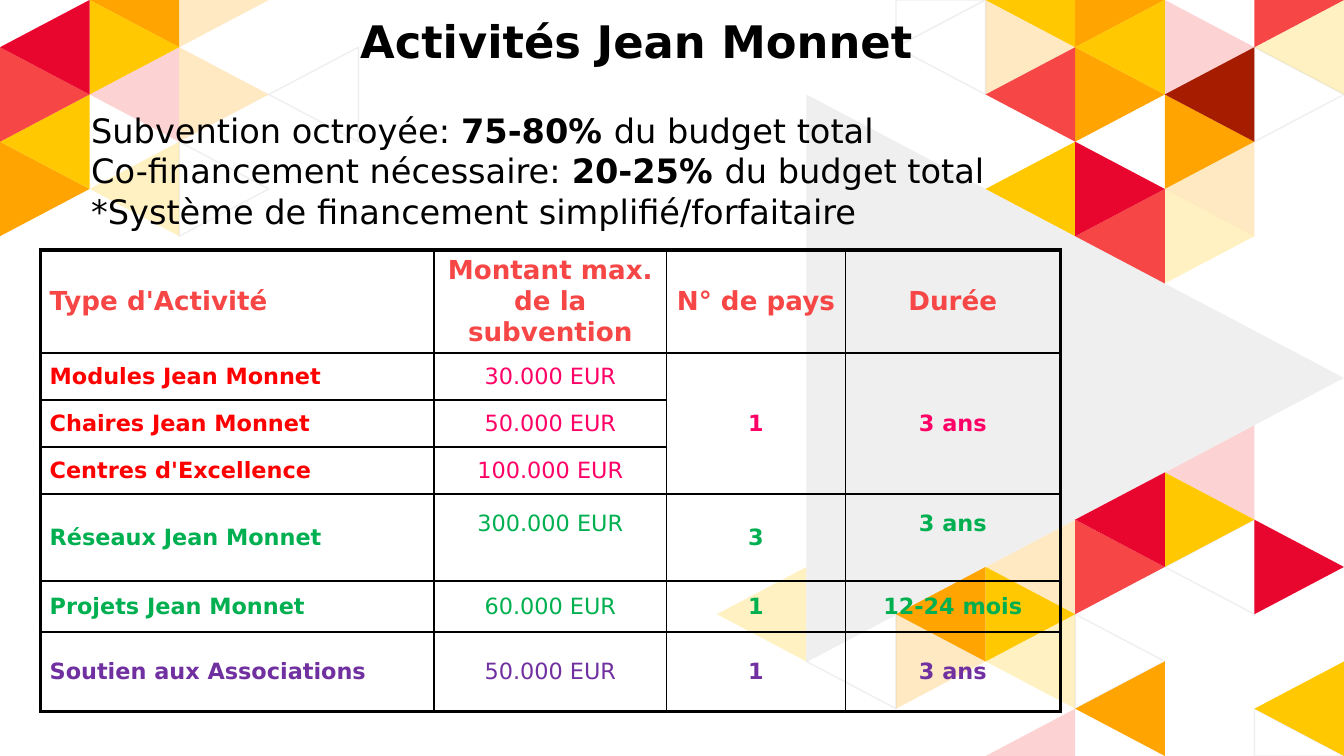
from dataclasses import dataclass
from lxml.etree import SubElement
from pptx import Presentation
from pptx.dml.color import RGBColor
from pptx.enum.text import MSO_ANCHOR, MSO_AUTO_SIZE, PP_ALIGN
from pptx.oxml.ns import qn
from pptx.util import Inches, Pt


@dataclass(frozen=True)
class Theme:
    font: str = "DejaVu Sans"
    black: str = "000000"
    white: str = "FFFFFF"
    grey: str = "EFEFEF"
    orange: str = "FFA400"
    yellow: str = "FFC800"
    coral: str = "F64646"
    crimson: str = "E8062F"
    brown: str = "A61C00"
    red: str = "FF0000"
    pink: str = "FF0066"
    green: str = "00B050"
    purple: str = "7030A0"
    title_size: int = 24
    body_size: int = 18
    header_size: int = 14
    cell_size: int = 12
    thin: float = 1
    thick: float = 2.25


theme = Theme()


def write(para, text, size, color, bold):
    span = para.add_run()
    span.text = text
    span.font.name = theme.font
    span.font.size = Pt(size)
    span.font.bold = bold
    span.font.color.rgb = RGBColor.from_string(color)


def place(box, left, top, width, height, anchor):
    box.left, box.top, box.width, box.height = (Inches(n) for n in (left, top, width, height))
    frame = box.text_frame
    frame.word_wrap = True
    frame.auto_size = MSO_AUTO_SIZE.NONE
    frame.vertical_anchor = anchor
    return frame


deck = Presentation()
deck.slide_width = Inches(10)
deck.slide_height = Inches(10) * 9 // 16
page = deck.slides.add_slide(deck.slide_layouts[5])

GRID_COLUMNS, GRID_ROWS = 15, 16
column = deck.slide_width / GRID_COLUMNS
row = deck.slide_height / GRID_ROWS

# (fill, opacity in percent, cells spanned, right-pointing, left-pointing)
triangles = [
    (theme.white, 100, 1, [(12, 13), (14, 1), (10, -1), (2, 3), (14, 15)],
     [(9, 13), (13, 11), (10, 0), (3, 1)]),
    (theme.orange, 24, 1, [(10, 13), (11, 0), (2, 1), (2, -1)], [(11, 11), (13, 3)]),
    (theme.yellow, 24, 1, [(13, 4)], [(8, 12), (11, 13), (14, 0), (1, 3)]),
    (theme.coral, 24, 1, [(13, 0)], [(13, 9), (11, 15), (1, 1)]),
    (theme.grey, 100, 6, [(9, 2)], []),
    (theme.orange, 100, 1, [(13, 2), (12, -1), (12, 1), (0, 3)], [(10, 12), (12, 14), (1, -1)]),
    (theme.yellow, 100, 1, [(11, 12), (13, 10), (1, 0)],
     [(11, -1), (14, 14), (11, 3), (12, 0), (0, 2)]),
    (theme.coral, 100, 1, [(12, 11), (14, -1), (0, 1)], [(11, 1), (12, 4)]),
    (theme.crimson, 100, 1, [(14, 11), (12, 3)], [(12, 10), (0, 0)]),
    (theme.brown, 100, 1, [], [(13, 1)]),
]
for color, opacity, size, right_pointing, left_pointing in triangles:
    outlines = [(x, x + size, y) for x, y in right_pointing]
    outlines += [(x + size, x, y) for x, y in left_pointing]
    for base, tip, top in outlines:
        corners = [(base, top), (base, top + 2 * size), (tip, top + size)]
        points = [(round(x * column), round(min(max(y, 0), GRID_ROWS) * row)) for x, y in corners]
        builder = page.shapes.build_freeform(*points[0])
        builder.add_line_segments(points[1:], close=True)
        triangle = builder.convert_to_shape()
        triangle.shadow.inherit = False
        triangle.fill.solid()
        triangle.fill.fore_color.rgb = RGBColor.from_string(color)
        if opacity < 100:
            tint = triangle.fill._xPr.find(".//" + qn("a:srgbClr"))
            SubElement(tint, qn("a:alpha"), val=str(opacity * 1000))
        if color == theme.white:
            triangle.line.color.rgb = RGBColor.from_string(theme.grey)
            triangle.line.width = Pt(0.75)
        else:
            triangle.line.fill.background()

title = page.shapes.title
page.shapes._spTree.append(title._element)
para = place(title, 2.58, 0.05, 6, 0.5, MSO_ANCHOR.MIDDLE).paragraphs[0]
para.alignment = PP_ALIGN.LEFT
write(para, "Activités Jean Monnet", theme.title_size, theme.black, True)

funding = [
    [("Subvention octroyée: ", False), ("75-80% ", True), ("du budget total", False)],
    [("Co-financement nécessaire: ", False), ("20-25% ", True), ("du budget total", False)],
    [("*Système de financement simplifié/forfaitaire", False)],
]
box = page.shapes.add_textbox(0, 0, 0, 0)
frame = place(box, 0.58, 0.77, 9.08, 1, MSO_ANCHOR.TOP)
for index, line in enumerate(funding):
    para = frame.add_paragraph() if index else frame.paragraphs[0]
    for text, bold in line:
        write(para, text, theme.body_size, theme.black, bold)

widths = [2.93, 1.73, 1.33, 1.6]
heights = [0.76, 0.35, 0.35, 0.35, 0.65, 0.38, 0.59]
activities = [
    (theme.coral, theme.coral,
     ["Type d'Activité", "Montant max. de la subvention", "N° de pays", "Durée"]),
    (theme.red, theme.pink, ["Modules Jean Monnet", "30.000 EUR", "1", "3 ans"]),
    (theme.red, theme.pink, ["Chaires Jean Monnet", "50.000 EUR", "", ""]),
    (theme.red, theme.pink, ["Centres d'Excellence", "100.000 EUR", "", ""]),
    (theme.green, theme.green, ["Réseaux Jean Monnet", "300.000 EUR", "3", "3 ans"]),
    (theme.green, theme.green, ["Projets Jean Monnet", "60.000 EUR", "1", "12-24 mois"]),
    (theme.purple, theme.purple, ["Soutien aux Associations", "50.000 EUR", "1", "3 ans"]),
]
table = page.shapes.add_table(len(heights), len(widths), Inches(0.3), Inches(1.86),
                              Inches(sum(widths)), Inches(sum(heights))).table
table.first_row = table.horz_banding = False
for table_column, width in zip(table.columns, widths):
    table_column.width = Inches(width)
for table_row, height in zip(table.rows, heights):
    table_row.height = Inches(height)
for x in (2, 3):
    table.cell(1, x).merge(table.cell(3, x))

last_x, last_y = len(widths) - 1, len(heights) - 1
for y, (name_color, value_color, texts) in enumerate(activities):
    for x, text in enumerate(texts):
        cell = table.cell(y, x)
        cell.vertical_anchor = MSO_ANCHOR.MIDDLE
        cell.margin_left = cell.margin_right = Inches(0.07)
        cell.margin_top = cell.margin_bottom = Inches(0.04)
        if text in ("300.000 EUR", "3 ans") and y == 4:
            cell.margin_bottom = Inches(0.24)
        properties = cell._tc.get_or_add_tcPr()
        edges = {"a:lnL": x == 0, "a:lnR": x == last_x, "a:lnT": y == 0, "a:lnB": y == last_y}
        for tag, outer in edges.items():
            weight = Pt(theme.thick if outer else theme.thin)
            border = SubElement(properties, qn(tag), w=str(weight))
            SubElement(SubElement(border, qn("a:solidFill")), qn("a:srgbClr"), val=theme.black)
        cell.fill.background()
        if text:
            para = cell.text_frame.paragraphs[0]
            para.alignment = PP_ALIGN.CENTER if x else PP_ALIGN.LEFT
            write(para, text, theme.cell_size if y else theme.header_size,
                  value_color if x else name_color, y == 0 or x != 1)

deck.save("out.pptx")
